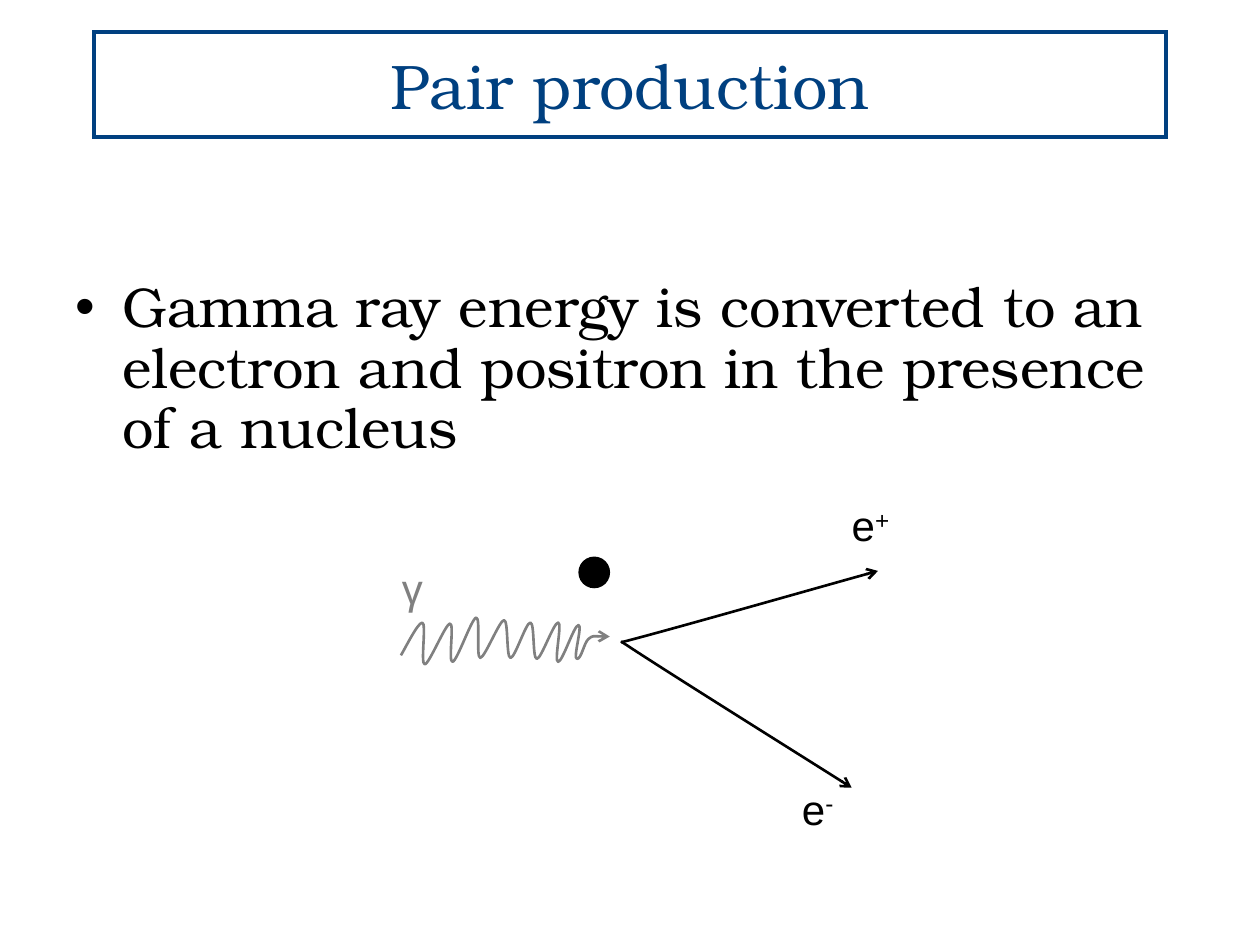
"""Build a slide that explains pair production."""
import math
from itertools import pairwise
from lxml import etree
from pptx import Presentation
from pptx import util as u
from pptx.dml.color import RGBColor
from pptx.enum import shapes, text
from pptx.oxml import ns

Cm, Pt, hue = u.Cm, u.Pt, RGBColor.from_string
SERIF, SANS = "TeX Gyre Bonum", "Arial"
BLUE, BLACK, GREY = "004080", "000000", "808080"


def style(run, face, size, tint):
    run.font.name = face
    run.font.size = Pt(size)
    run.font.color.rgb = hue(tint)


def curve(group, dots, tint):
    first, *rest = [(Cm(x), Cm(y)) for x, y in dots]
    pen = group.shapes.build_freeform(*first)
    pen.add_line_segments(rest, close=False)
    shape = pen.convert_to_shape()
    lines = list(shape._element.iter(ns.qn("a:lnTo")))
    for i in range(0, len(lines), 3):
        bend = etree.SubElement(lines[i].getparent(), ns.qn("a:cubicBezTo"))
        for line in lines[i:i + 3]:
            bend.append(line[0])
            line.getparent().remove(line)
    shape.fill.background()
    shape.shadow.inherit = False
    shape.line.color.rgb = hue(tint)
    shape.line.width = Pt(1.5)
    stroke = shape.line._get_or_add_ln()
    etree.SubElement(stroke, ns.qn("a:round"))
    etree.SubElement(stroke, ns.qn("a:tailEnd"), type="arrow")
    return shape


deck = Presentation()
deck.slide_width, deck.slide_height = Cm(25.4), Cm(19.05)
slide = deck.slides.add_slide(deck.slide_layouts[6])
items = slide.shapes

title = items.add_shape(
    shapes.MSO_SHAPE.RECTANGLE, Cm(1.9), Cm(0.64), Cm(21.6), Cm(2.12))
title.shadow.inherit = False
title.fill.background()
title.line.color.rgb = hue(BLUE)
title.line.width = Pt(2.25)
etree.SubElement(title.line._get_or_add_ln(), ns.qn("a:miter"), lim="800000")
title.text_frame.text = "Pair production"
title.text_frame.vertical_anchor = text.MSO_ANCHOR.MIDDLE
para = title.text_frame.paragraphs[0]
para.alignment = text.PP_ALIGN.CENTER
style(para.runs[0], SERIF, 36, BLUE)

body = items.add_textbox(Cm(1.27), Cm(5.51), Cm(22.86), Cm(4.25))
body.text_frame.word_wrap = True
body.text_frame.text = ("Gamma ray energy is converted to an electron and "
                        "positron in the presence of a nucleus")
para = body.text_frame.paragraphs[0]
para.line_spacing = 0.9
para.space_before = Pt(6.4)
style(para.runs[0], SERIF, 32, BLACK)
props = para._p.get_or_add_pPr()
props.set("marL", str(Cm(0.95)))
props.set("indent", str(-Cm(0.95)))
etree.SubElement(props, ns.qn("a:buFont"), typeface=SANS)
etree.SubElement(props, ns.qn("a:buChar"), char="•")

group = items.add_group_shape()
for track in [
        [(12.52, 12.95), (13.39, 12.73), (16.61, 11.81), (17.7, 11.51)],
        [(12.52, 12.93), (13.28, 13.44), (16.21, 15.27), (17.17, 15.88)]]:
    curve(group, track, BLACK)

core = group.shapes.add_shape(
    shapes.MSO_SHAPE.OVAL, Cm(11.66), Cm(11.22), Cm(0.64), Cm(0.64))
core.shadow.inherit = False
core.fill.solid()
core.fill.fore_color.rgb = hue(BLACK)
core.line.fill.background()

knots = [
    (8.08, 13.21, -0.15), (8.51, 12.55, 0), (8.56, 13.39, 0),
    (9.07, 12.57, 0), (9.12, 13.34, 0), (9.6, 12.45, 0),
    (9.68, 13.26, 0), (10.16, 12.5, 0), (10.29, 13.26, 0),
    (10.69, 12.55, 0), (10.82, 13.28, 0), (11.25, 12.55, 0),
    (11.25, 13.34, 0), (11.66, 12.6, 0), (11.63, 13.28, 0),
    (11.86, 12.88, -0.08), (12.29, 12.83, 0)]
reach = 0.09
dots = [knots[0][:2]]
for (xa, ya, ra), (xb, yb, rb) in pairwise(knots):
    dots += [(xa + reach, ya + ra), (xb - reach, yb - rb), (xb, yb)]
tilt, midx, midy = 20.9, 10.19, 13.02
cos, sin = math.cos(math.radians(tilt)), math.sin(math.radians(tilt))
turned = [(midx + (x - midx) * cos + (y - midy) * sin,
           midy + (y - midy) * cos - (x - midx) * sin) for x, y in dots]
wave = curve(group, turned, GREY)
wave.rotation = tilt

for sign, power, x, y, wide, tint in [
        ("e", "-", 15.9, 15.67, 1.17, BLACK),
        ("γ", "", 7.82, 11.22, 0.99, GREY),
        ("e", "+", 16.89, 9.95, 1.32, BLACK)]:
    label = group.shapes.add_textbox(Cm(x), Cm(y), Cm(wide), Cm(1.27))
    label.text_frame.word_wrap = False
    label.text_frame.text = sign
    para = label.text_frame.paragraphs[0]
    para.alignment = text.PP_ALIGN.CENTER
    if power:
        run = para.add_run()
        run.text = power
        run.font._element.set("baseline", "30000")
    for run in para.runs:
        style(run, SANS, 24, tint)

deck.save("out.pptx")
